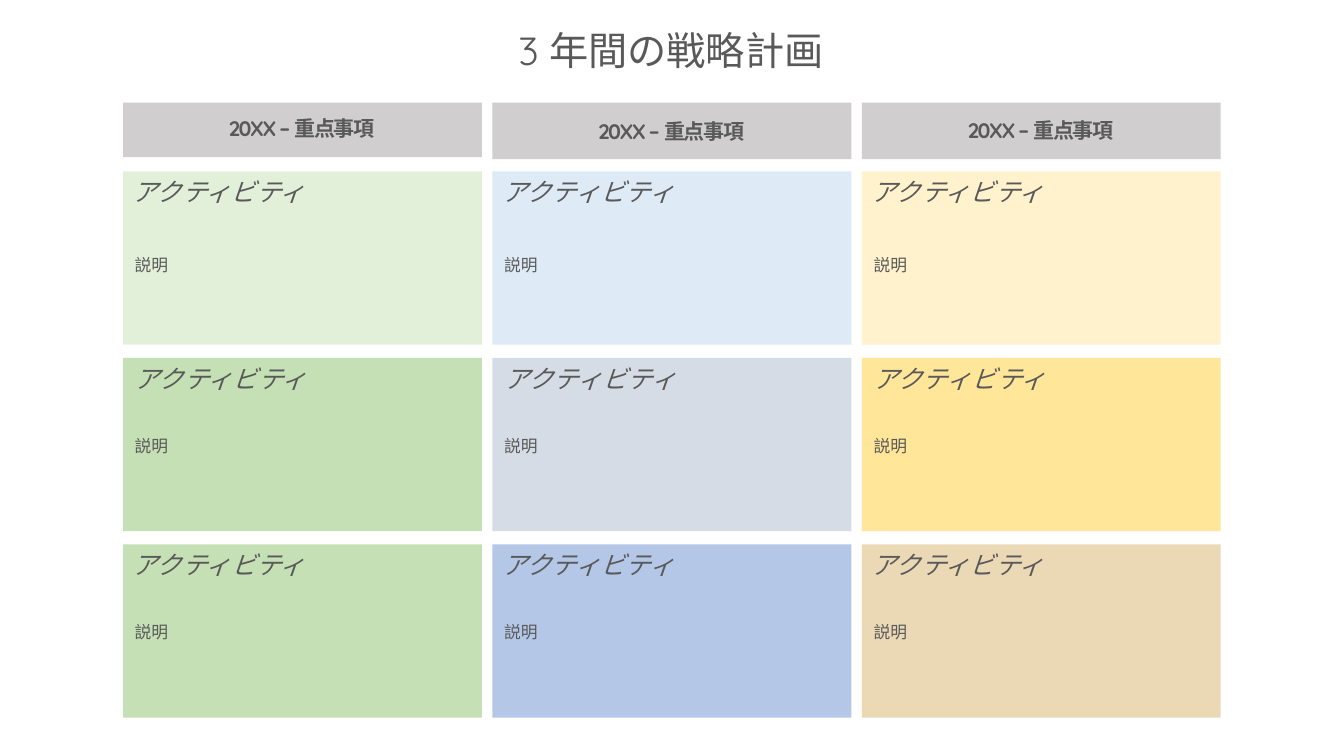
from dataclasses import dataclass
from itertools import product

from pptx import Presentation
from pptx.dml.color import RGBColor
from pptx.enum.shapes import MSO_SHAPE
from pptx.enum.text import MSO_ANCHOR, MSO_AUTO_SIZE, PP_ALIGN
from pptx.shapes.base import BaseShape
from pptx.slide import Slide
from pptx.util import Pt


@dataclass(frozen=True)
class Theme:
    face: str = "Quicksand"
    ink: str = "595959"
    head: str = "D0CECE"
    title: int = 28
    focus: int = 15
    name: int = 18
    note: int = 12


@dataclass(frozen=True)
class Box:
    left: float
    top: float
    width: float
    height: float


@dataclass(frozen=True)
class Year:
    deep: float
    drop: float
    fills: tuple[str, str, str]


@dataclass(frozen=True)
class Row:
    shift: float
    drop: float
    width: float


THEME = Theme()
YEARS = (
    Year(38.9, 5.8, ("E2F0D9", "C5E0B4", "C5E0B4")),
    Year(40.3, 7.9, ("DEEBF7", "D6DCE5", "B4C7E7")),
    Year(40.3, 7.2, ("FFF2CC", "FFE699", "EBD9B6")),
)
ROWS = (Row(0, 56.2, 221), Row(1.4, 52, 221), Row(0, 51.5, 255.6))
LEFT, WIDE, STEP = 87.9, 256.3, 263.9
HEAD, TOP, TALL, PITCH = 73.4, 122.4, 123.8, 133.2


def place(shape: BaseShape, box: Box) -> None:
    for key in ("left", "top", "width", "height"):
        setattr(shape, key, Pt(getattr(box, key)))


def panel(slide: Slide, box: Box, fill: str) -> None:
    shape = slide.shapes.add_shape(MSO_SHAPE.RECTANGLE, 0, 0, 0, 0)
    place(shape, box)
    shape.shadow.inherit = False
    shape.fill.solid()
    shape.fill.fore_color.rgb = RGBColor.from_string(fill)
    shape.line.fill.background()


def write(shape: BaseShape, box: Box, text: str, size: int,
          align: PP_ALIGN = PP_ALIGN.LEFT, bold: bool = False,
          slant: bool = False, track: int = 0) -> None:
    frame = shape.text_frame
    look = {"word_wrap": True, "auto_size": MSO_AUTO_SIZE.SHAPE_TO_FIT_TEXT,
            "vertical_anchor": MSO_ANCHOR.TOP}
    for key, value in look.items():
        setattr(frame, key, value)
    place(shape, box)
    para = frame.paragraphs[0]
    para.alignment = align
    run = para.add_run()
    run.text = text
    style = {"name": THEME.face, "size": Pt(size), "bold": bold, "italic": slant}
    for key, value in style.items():
        setattr(run.font, key, value)
    run.font.color.rgb = RGBColor.from_string(THEME.ink)
    if track:
        run._r.get_or_add_rPr().set("spc", str(track))


def label(slide: Slide, box: Box, text: str, size: int, **style: object) -> None:
    write(slide.shapes.add_textbox(0, 0, 0, 0), box, text, size, **style)


def main() -> None:
    deck = Presentation()
    deck.slide_width, deck.slide_height = Pt(960), Pt(540)
    slide = deck.slides.add_slide(deck.slide_layouts[5])
    write(slide.shapes.title, Box(13, 15.1, 932.4, 41), "3 年間の戦略計画",
          THEME.title, align=PP_ALIGN.CENTER)

    for col, year in enumerate(YEARS):
        left = LEFT + col * STEP
        panel(slide, Box(left, HEAD, WIDE, year.deep), THEME.head)
        label(slide, Box(left - 0.5, HEAD + year.drop, WIDE, 25.2),
              "20XX – 重点事項", THEME.focus,
              align=PP_ALIGN.CENTER, bold=True, track=-100)

    for (col, year), (line, row) in product(enumerate(YEARS), enumerate(ROWS)):
        left, top = LEFT + col * STEP, TOP + line * PITCH
        panel(slide, Box(left, top, WIDE, TALL), year.fills[line])
        label(slide, Box(left + row.shift, top + 0.3, row.width, 28.8),
              "アクティビティ", THEME.name, slant=True)
        label(slide, Box(left + 1.2, top + row.drop, 255.6, 21.6),
              "説明", THEME.note)

    deck.save("out.pptx")


if __name__ == "__main__":
    main()
